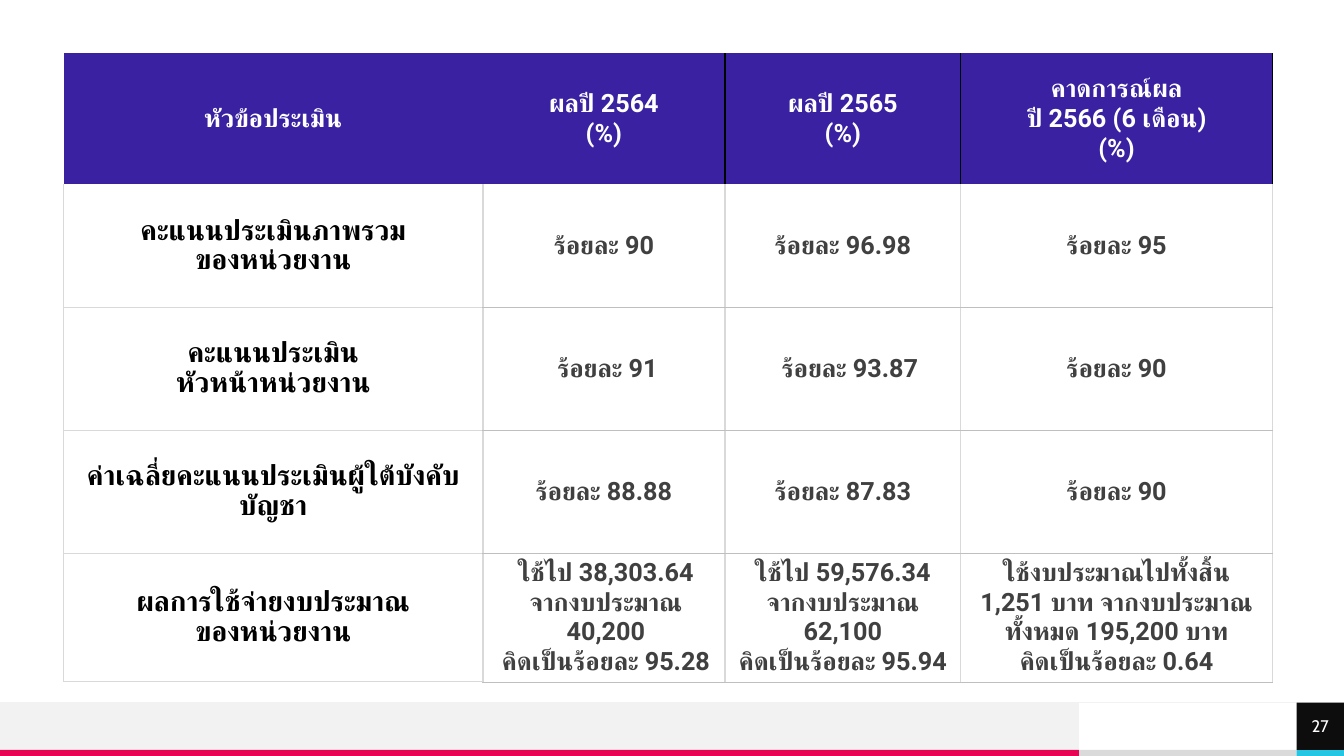
"""Build the evaluation results slide: a score table above a footer band."""
from dataclasses import dataclass

from lxml import etree
from pptx import Presentation
from pptx.dml.color import RGBColor
from pptx.enum.shapes import MSO_CONNECTOR, MSO_SHAPE
from pptx.enum.text import MSO_ANCHOR, PP_ALIGN
from pptx.oxml.ns import qn
from pptx.util import Inches, Pt

RECTANGLE = MSO_SHAPE.RECTANGLE
STRAIGHT = MSO_CONNECTOR.STRAIGHT
MIDDLE = MSO_ANCHOR.MIDDLE
CENTER = PP_ALIGN.CENTER


@dataclass(frozen=True)
class Theme:
    body_font: str = "Roboto"
    footer_font: str = "Cabin"
    white: str = "FFFFFF"
    black: str = "000000"
    header: str = "3921A1"
    grey_text: str = "404040"
    grid: str = "D9D9D9"
    rule: str = "BFBFBF"
    band: str = "F2F2F2"
    strip: str = "DADADA"
    pink: str = "E80554"
    cyan: str = "25C6E3"
    number_box: str = "0D0D0D"
    cell_size: float = 18
    topic_size: float = 20
    number_size: float = 12
    topic_spacing: float = 0.9


THEME = Theme()

ROWS = [
    ["หัวข้อประเมิน", "ผลปี 2564\n(%)", "ผลปี 2565\n(%)",
     "คาดการณ์ผล\nปี 2566 (6 เดือน)\n(%)"],
    ["คะแนนประเมินภาพรวม\nของหน่วยงาน", "ร้อยละ 90", "ร้อยละ 96.98", "ร้อยละ 95"],
    ["คะแนนประเมิน\nหัวหน้าหน่วยงาน", "ร้อยละ 91", "ร้อยละ 93.87", "ร้อยละ 90"],
    ["ค่าเฉลี่ยคะแนนประเมินผู้ใต้บังคับบัญชา", "ร้อยละ 88.88", "ร้อยละ 87.83",
     "ร้อยละ 90"],
    ["ผลการใช้จ่ายงบประมาณ\nของหน่วยงาน",
     "ใช้ไป 38,303.64 จากงบประมาณ 40,200\nคิดเป็นร้อยละ 95.28",
     "ใช้ไป 59,576.34 จากงบประมาณ 62,100\nคิดเป็นร้อยละ 95.94",
     "ใช้งบประมาณไปทั้งสิ้น 1,251 บาท จากงบประมาณทั้งหมด 195,200 บาท\n"
     "คิดเป็นร้อยละ 0.64"],
]
COLUMN_WIDTHS = [4.16, 2.4, 2.34, 3.09]
ROW_HEIGHTS = [1.3] + [1.22] * 4
TABLE_LEFT, TABLE_TOP = 0.63, 0.53
LEFT_MARGINS = {(2, 1): 0.17, (2, 2): 0.24, (4, 1): 0.14}

SLIDE_WIDTH, SLIDE_HEIGHT = 13.33, 7.5
FOOTER_TOP, STRIP_TOP = 6.97, 7.44
BAND_RIGHT, NUMBER_LEFT = 10.7, 12.86
FOOTER_BLOCKS = [
    (BAND_RIGHT, STRIP_TOP, NUMBER_LEFT, SLIDE_HEIGHT, THEME.strip),
    (0, FOOTER_TOP, BAND_RIGHT, STRIP_TOP, THEME.band),
    (0, STRIP_TOP, BAND_RIGHT, SLIDE_HEIGHT, THEME.pink),
    (NUMBER_LEFT, STRIP_TOP, SLIDE_WIDTH, SLIDE_HEIGHT, THEME.cyan),
]
PAGE_NUMBER = "27"


def color(value):
    return RGBColor.from_string(value)


def format_run(run, font_name, size, text_color, bold=False):
    run.font.name = font_name
    run.font.size = Pt(size)
    run.font.bold = bold
    run.font.color.rgb = color(text_color)
    complex_script = etree.SubElement(run.font._element, qn("a:cs"))
    complex_script.set("typeface", font_name)


def set_border(cell, side, border):
    line = etree.SubElement(cell._tc.get_or_add_tcPr(), qn(f"a:ln{side}"))
    if border is None:
        etree.SubElement(line, qn("a:noFill"))
        return
    line_color, width = border
    line.set("w", str(Pt(width)))
    fill = etree.SubElement(line, qn("a:solidFill"))
    etree.SubElement(fill, qn("a:srgbClr")).set("val", line_color)


def cell_borders(row, column):
    if row == 0:
        divider = (THEME.black, 1)
        return {"L": divider if column > 1 else None,
                "R": divider if column > 0 else None, "T": None, "B": None}
    side = (THEME.grid, 1)
    level = side if column == 0 else (THEME.rule, 0.25)
    return {"L": side, "R": side, "T": level if row > 1 else None, "B": level}


def cell_style(row, column):
    if row == 0:
        return THEME.cell_size, THEME.white, 1.0
    if column == 0:
        return THEME.topic_size, THEME.black, THEME.topic_spacing
    return THEME.cell_size, THEME.grey_text, 1.0


def fill_cell(cell, row, column, text):
    for side, border in cell_borders(row, column).items():
        set_border(cell, side, border)
    cell.fill.solid()
    cell.fill.fore_color.rgb = color(THEME.white if row else THEME.header)
    cell.vertical_anchor = MIDDLE
    cell.margin_left = Inches(LEFT_MARGINS.get((row, column), 0.1))
    cell.text_frame.text = text
    size, text_color, spacing = cell_style(row, column)
    for paragraph in cell.text_frame.paragraphs:
        paragraph.alignment = CENTER
        paragraph.line_spacing = spacing
        for run in paragraph.runs:
            format_run(run, THEME.body_font, size, text_color, True)


def add_results_table(slide):
    frame = slide.shapes.add_table(
        len(ROWS), len(COLUMN_WIDTHS), Inches(TABLE_LEFT), Inches(TABLE_TOP),
        Inches(sum(COLUMN_WIDTHS)), Inches(sum(ROW_HEIGHTS)))
    table = frame.table
    table.horz_banding = False
    for column, width in zip(table.columns, COLUMN_WIDTHS):
        column.width = Inches(width)
    for table_row, height in zip(table.rows, ROW_HEIGHTS):
        table_row.height = Inches(height)
    for row, texts in enumerate(ROWS):
        for column, text in enumerate(texts):
            fill_cell(table.cell(row, column), row, column, text)


def add_block(slide, left, top, right, bottom, fill_color):
    shape = slide.shapes.add_shape(RECTANGLE, Inches(left), Inches(top),
                                   Inches(right - left), Inches(bottom - top))
    shape.shadow.inherit = False
    shape.fill.solid()
    shape.fill.fore_color.rgb = color(fill_color)
    shape.line.fill.background()
    return shape


def add_footer(slide):
    for block in FOOTER_BLOCKS:
        add_block(slide, *block)
    rule = slide.shapes.add_connector(STRAIGHT, Inches(SLIDE_WIDTH), Inches(FOOTER_TOP),
                                      0, Inches(FOOTER_TOP))
    rule.line.color.rgb = color(THEME.band)
    rule.line.width = Pt(0.5)
    etree.SubElement(rule._element.spPr, qn("a:effectLst"))


def add_page_number(slide):
    shape = add_block(slide, NUMBER_LEFT, FOOTER_TOP, SLIDE_WIDTH, STRIP_TOP,
                      THEME.number_box)
    text_frame = shape.text_frame
    text_frame.margin_left = text_frame.margin_right = 0
    text_frame.margin_top = text_frame.margin_bottom = 0
    text_frame.vertical_anchor = MIDDLE
    text_frame.text = PAGE_NUMBER
    paragraph = text_frame.paragraphs[0]
    paragraph.alignment = CENTER
    format_run(paragraph.runs[0], THEME.footer_font, THEME.number_size, THEME.white)


def main():
    presentation = Presentation()
    presentation.slide_width = Inches(SLIDE_WIDTH)
    presentation.slide_height = Inches(SLIDE_HEIGHT)
    slide = presentation.slides.add_slide(presentation.slide_layouts[6])
    add_footer(slide)
    add_results_table(slide)
    add_page_number(slide)
    presentation.save("out.pptx")


if __name__ == "__main__":
    main()
